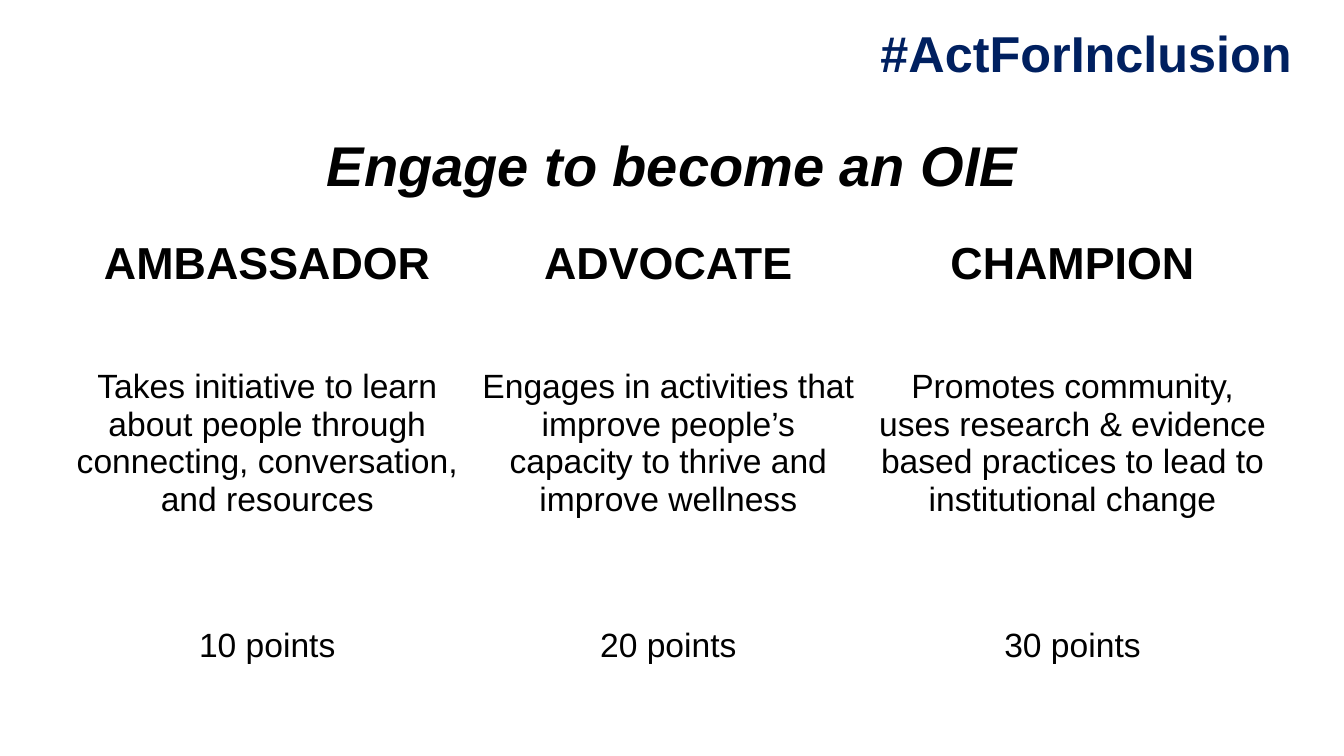
from pptx import Presentation
from pptx import util as u
from pptx.dml.color import RGBColor
from pptx.enum import text

PX = 9525  # EMU in one px, 96 px to the inch
FONT = "Arial"
BLACK = "000000"
NAVY = "002060"

LEVELS = [
    ("AMBASSADOR", "Takes initiative to learn about people through connecting, "
     "conversation, and resources", "10 points"),
    ("ADVOCATE", "Engages in activities that improve people’s capacity to thrive "
     "and improve wellness", "20 points"),
    ("CHAMPION", "Promotes community, uses research & evidence based practices "
     "to lead to institutional change", "30 points"),
]
COLUMN_WIDTHS = [385, 379, 391]
ROW_HEIGHTS = [60, 277, 108]


def px(*lengths):
    return [u.Emu(length * PX) for length in lengths]


def color(value):
    return RGBColor.from_string(value)


def write(frame, words, size, align=text.PP_ALIGN.CENTER, ink=BLACK,
          bold=False, italic=False, spacing=None):
    """Put one styled run into the first paragraph of a text frame."""
    para = frame.paragraphs[0]
    para.alignment = align
    para.line_spacing = spacing
    span = para.add_run()
    span.text = words
    font = span.font
    font.name, font.size = FONT, u.Pt(size)
    font.bold, font.italic = bold, italic
    font.color.rgb = color(ink)


def add_heading(page, place, words, size, anchor, **style):
    box = page.shapes.add_textbox(*px(*place))
    frame = box.text_frame
    frame.word_wrap = True
    frame.vertical_anchor = anchor
    write(frame, words, size, bold=True, spacing=0.9, **style)


def add_levels_table(page, left, top):
    size = px(left, top, sum(COLUMN_WIDTHS), sum(ROW_HEIGHTS))
    table = page.shapes.add_table(len(ROW_HEIGHTS), len(LEVELS), *size).table
    table.first_row = table.horz_banding = False
    for row, height in zip(table.rows, px(*ROW_HEIGHTS)):
        row.height = height
    for column, width in zip(table.columns, px(*COLUMN_WIDTHS)):
        column.width = width
    for c, level in enumerate(LEVELS):
        for r, words in enumerate(level):
            cell = table.cell(r, c)
            cell.fill.background()
            is_name = r == 0
            cell.vertical_anchor = (text.MSO_ANCHOR.TOP if is_name
                                    else text.MSO_ANCHOR.MIDDLE)
            write(cell.text_frame, words, 32 if is_name else 24, bold=is_name)


def main():
    deck = Presentation()
    deck.slide_width, deck.slide_height = px(1280, 720)
    page = deck.slides.add_slide(deck.slide_layouts[6])
    add_heading(page, (160, 0, 1080, 108), "#ActForInclusion", 36,
                text.MSO_ANCHOR.MIDDLE, align=text.PP_ALIGN.RIGHT, ink=NAVY)
    add_heading(page, (0, 127, 1280, 68), "Engage to become an OIE", 40,
                text.MSO_ANCHOR.TOP, italic=True)
    add_levels_table(page, 62, 223)
    deck.save("out.pptx")


if __name__ == "__main__":
    main()
